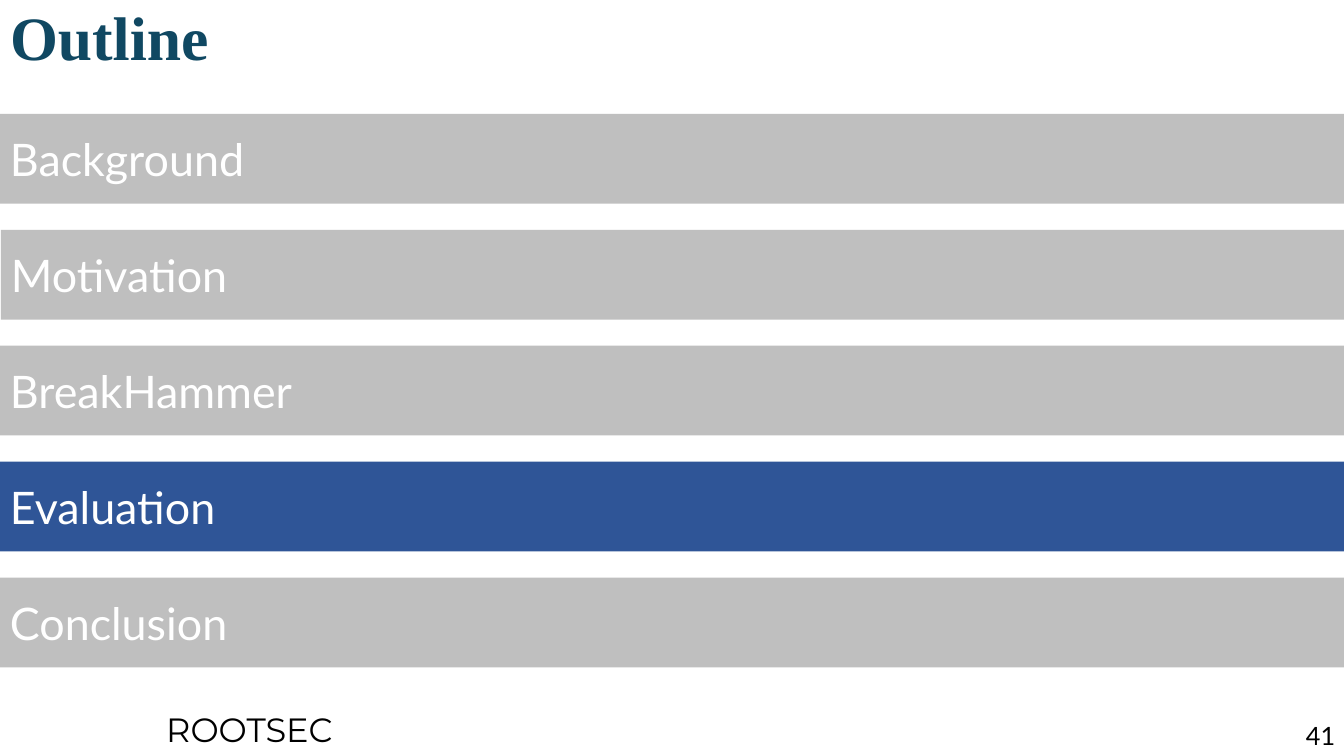
"""Build the outline slide with its current section highlighted."""
from dataclasses import dataclass

from pptx import Presentation
from pptx.dml.color import RGBColor as Rgb
from pptx.enum.shapes import MSO_SHAPE as Shape
from pptx.enum.text import MSO_ANCHOR as Anchor, MSO_AUTO_SIZE as Fit, PP_ALIGN as Align
from pptx.util import Inches, Pt


@dataclass(frozen=True)
class Theme:
    paper: Rgb = Rgb.from_string("FFFFFF")
    ink: Rgb = Rgb.from_string("000000")
    head: Rgb = Rgb.from_string("104862")
    idle: Rgb = Rgb.from_string("BFBFBF")
    live: Rgb = Rgb.from_string("2F5597")
    serif: str = "Times New Roman"
    sans: str = "Lato"
    brand: str = "Montserrat"
    title: int = 44
    item: int = 32
    label: int = 24
    page: int = 18


THEME = Theme()
WIDTH = 13.33
TOP, STEP, HEIGHT = 1.13, 1.15, 0.89
ACTIVE = "Evaluation"
TOPICS = [
    ("Background", 0),
    ("Motivation", 0.01),
    ("BreakHammer", 0),
    (ACTIVE, 0),
    ("Conclusion", 0),
]


def write(frame, text, face, size, color, bold=False, align=Align.LEFT):
    para = frame.paragraphs[0]
    para.alignment = align
    run = para.add_run()
    run.text = text
    font = run.font
    font.name, font.size, font.bold = face, Pt(size), bold
    font.color.rgb = color
    return para


def add_title(slide, text):
    title = slide.shapes.title
    title.left, title.top = Inches(0), Inches(0)
    title.width, title.height = Inches(WIDTH), Inches(0.8)
    frame = title.text_frame
    frame.vertical_anchor = Anchor.MIDDLE
    para = write(frame, text, THEME.serif, THEME.title, THEME.head, bold=True)
    para.line_spacing = 0.9


def add_bar(slide, text, left, top):
    bar = slide.shapes.add_shape(
        Shape.RECTANGLE, Inches(left), Inches(top), Inches(WIDTH), Inches(HEIGHT)
    )
    bar.shadow.inherit = False
    bar.fill.solid()
    bar.fill.fore_color.rgb = THEME.live if text == ACTIVE else THEME.idle
    bar.line.fill.background()
    bar.text_frame.vertical_anchor = Anchor.MIDDLE
    write(bar.text_frame, text, THEME.sans, THEME.item, THEME.paper)


def add_label(slide, text, area, face, size, align=Align.LEFT, wrap=True):
    box = slide.shapes.add_textbox(*map(Inches, area))
    frame = box.text_frame
    frame.word_wrap = wrap
    frame.auto_size = Fit.SHAPE_TO_FIT_TEXT
    write(frame, text, face, size, THEME.ink, align=align)


def main():
    deck = Presentation()
    deck.slide_width, deck.slide_height = Inches(WIDTH), Inches(7.5)
    slide = deck.slides.add_slide(deck.slide_layouts[5])
    slide.background.fill.solid()
    slide.background.fill.fore_color.rgb = THEME.paper

    add_title(slide, "Outline")
    for row, (topic, left) in enumerate(TOPICS):
        add_bar(slide, topic, left, TOP + row * STEP)
    add_label(slide, "ROOTSEC", (1.55, 6.98, 1.91, 0.5), THEME.brand, THEME.label, wrap=False)
    add_label(slide, "41", (12.59, 7.1, 0.75, 0.4), THEME.sans, THEME.page, Align.RIGHT)
    deck.save("out.pptx")


if __name__ == "__main__":
    main()
